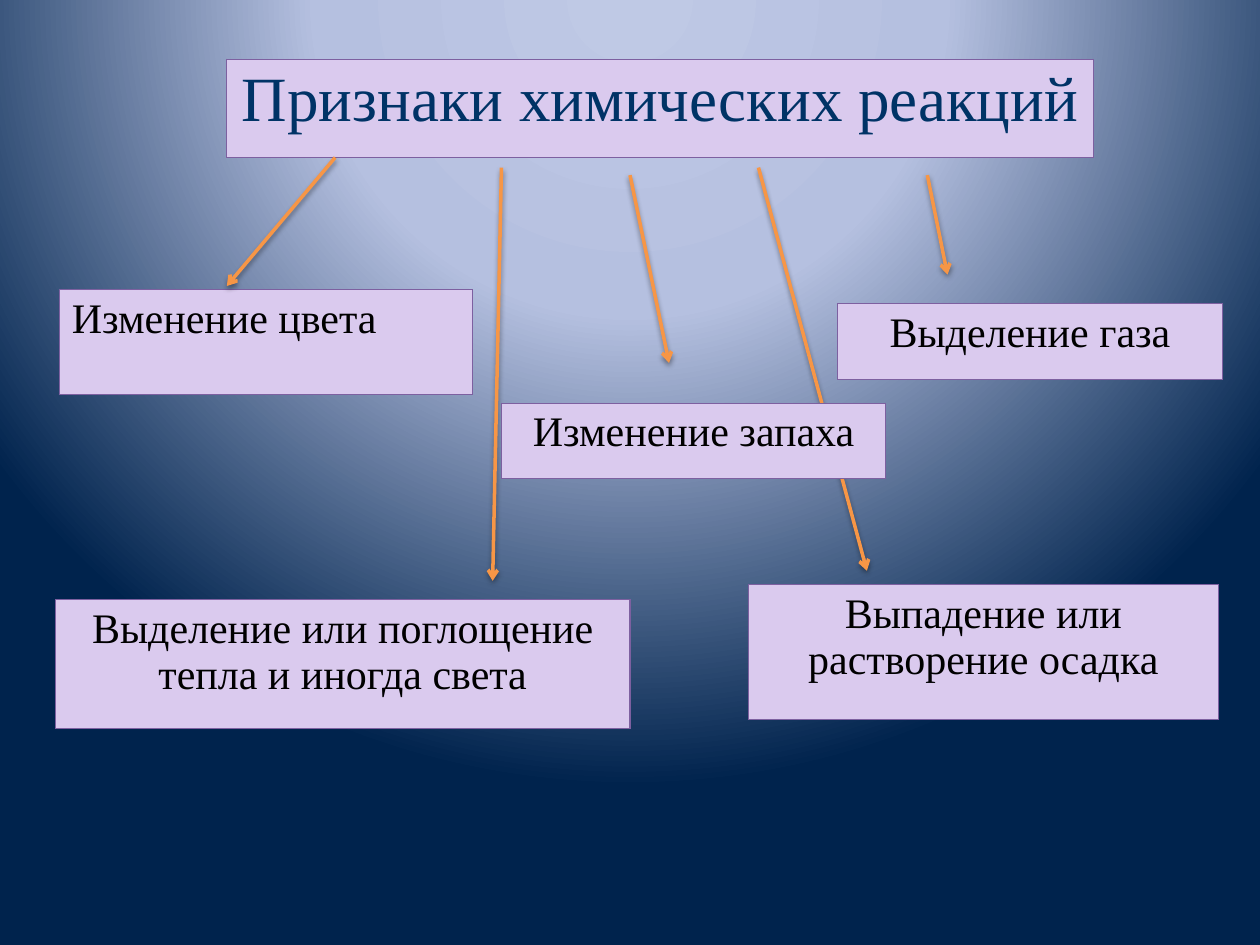
from dataclasses import dataclass

from pptx import Presentation
from pptx.dml.color import RGBColor
from pptx.enum.shapes import MSO_CONNECTOR
from pptx.enum.text import PP_ALIGN
from pptx.oxml import parse_xml
from pptx.oxml.ns import nsdecls
from pptx.util import Inches, Pt

STRAIGHT = MSO_CONNECTOR.STRAIGHT
LEFT, CENTER = PP_ALIGN.LEFT, PP_ALIGN.CENTER


@dataclass(frozen=True)
class Theme:
    font: str = "Times New Roman"
    title_size: int = 36
    body_size: int = 24
    title: str = "003366"
    body: str = "000000"
    cell: str = "DACAEE"
    border: str = "7D60A0"
    arrow: str = "F79646"
    shadow: str = "000000"
    glow: tuple = ((0, "BFC9E5"), (40, "B5C0E0"), (100, "00234D"))


THEME = Theme()

# Text, box (left, top, width, height), alignment
SIGNS = [
    ("Изменение цвета", (0.47, 2.3, 3.28, 0.83), LEFT),
    ("Выделение газа", (6.65, 2.41, 3.05, 0.6), CENTER),
    ("Выделение или поглощение тепла и иногда света",
     (0.44, 4.76, 4.56, 1.02), CENTER),
    ("Выпадение или растворение осадка", (5.94, 4.64, 3.73, 1.07), CENTER),
]
SMELL = ("Изменение запаха", (3.98, 3.2, 3.05, 0.6), CENTER)

# Start and end points
TO_SEDIMENT = ((6.02, 1.33), (6.88, 4.53))
TO_COLOR = ((2.66, 1.25), (1.8, 2.27))
TO_GAS = ((7.36, 1.39), (7.52, 2.18))
TO_HEAT = ((3.98, 1.33), (3.91, 4.61))
TO_SMELL = ((5, 1.39), (5.31, 2.88))


def set_background(s):
    """Radial glow centred above the top edge of the slide."""
    stops = "".join(
        f'<a:gs pos="{pos * 1000}"><a:srgbClr val="{color}"/></a:gs>'
        for pos, color in THEME.glow)
    s.element.cSld.insert(0, parse_xml(
        f'<p:bg {nsdecls("p", "a")}><p:bgPr><a:gradFill rotWithShape="1">'
        f'<a:gsLst>{stops}</a:gsLst><a:path path="circle">'
        '<a:fillToRect l="50000" t="-80000" r="50000" b="180000"/></a:path>'
        '</a:gradFill><a:effectLst/></p:bgPr></p:bg>'))


def set_borders(cell):
    tc_pr = cell._tc.get_or_add_tcPr()
    for i, side in enumerate("LRTB"):
        tc_pr.insert(i, parse_xml(
            f'<a:ln{side} {nsdecls("a")} w="{Pt(0.75)}"><a:solidFill>'
            f'<a:srgbClr val="{THEME.border}"/></a:solidFill></a:ln{side}>'))


def add_label(s, text, box, align=CENTER, size=THEME.body_size,
              color=THEME.body):
    """One-cell table holding a single caption."""
    table = s.shapes.add_table(1, 1, *map(Inches, box)).table
    table.first_row = table.horz_banding = False
    cell = table.cell(0, 0)
    cell.fill.solid()
    cell.fill.fore_color.rgb = RGBColor.from_string(THEME.cell)
    set_borders(cell)
    p = cell.text_frame.paragraphs[0]
    p.text = text
    p.alignment = align
    p.font.name = THEME.font
    p.font.size = Pt(size)
    p.font.color.rgb = RGBColor.from_string(color)


def add_arrow(s, start, end):
    line = s.shapes.add_connector(STRAIGHT, *map(Inches, start + end))
    line.line.width = Pt(2)
    line.line.color.rgb = RGBColor.from_string(THEME.arrow)
    sp_pr = line._element.spPr
    sp_pr.find("{*}ln").append(
        parse_xml(f'<a:tailEnd {nsdecls("a")} type="arrow"/>'))
    sp_pr.append(parse_xml(
        f'<a:effectLst {nsdecls("a")}><a:outerShdw blurRad="{Pt(3.1)}" '
        f'dist="{Pt(1.6)}" dir="5400000" rotWithShape="0">'
        f'<a:srgbClr val="{THEME.shadow}"><a:alpha val="38000"/></a:srgbClr>'
        '</a:outerShdw></a:effectLst>'))


def build_signs_slide(prs):
    s = prs.slides.add_slide(prs.slide_layouts[6])
    set_background(s)
    add_arrow(s, *TO_SEDIMENT)
    add_label(s, "Признаки химических реакций", (1.8, 0.47, 6.88, 0.78),
              size=THEME.title_size, color=THEME.title)
    for sign in SIGNS:
        add_label(s, *sign)
    for arrow in (TO_COLOR, TO_GAS, TO_HEAT):
        add_arrow(s, *arrow)
    add_label(s, *SMELL)
    add_arrow(s, *TO_SMELL)


def main():
    prs = Presentation()
    prs.slide_width, prs.slide_height = Inches(10), Inches(7.5)
    build_signs_slide(prs)
    prs.save("out.pptx")


if __name__ == "__main__":
    main()
